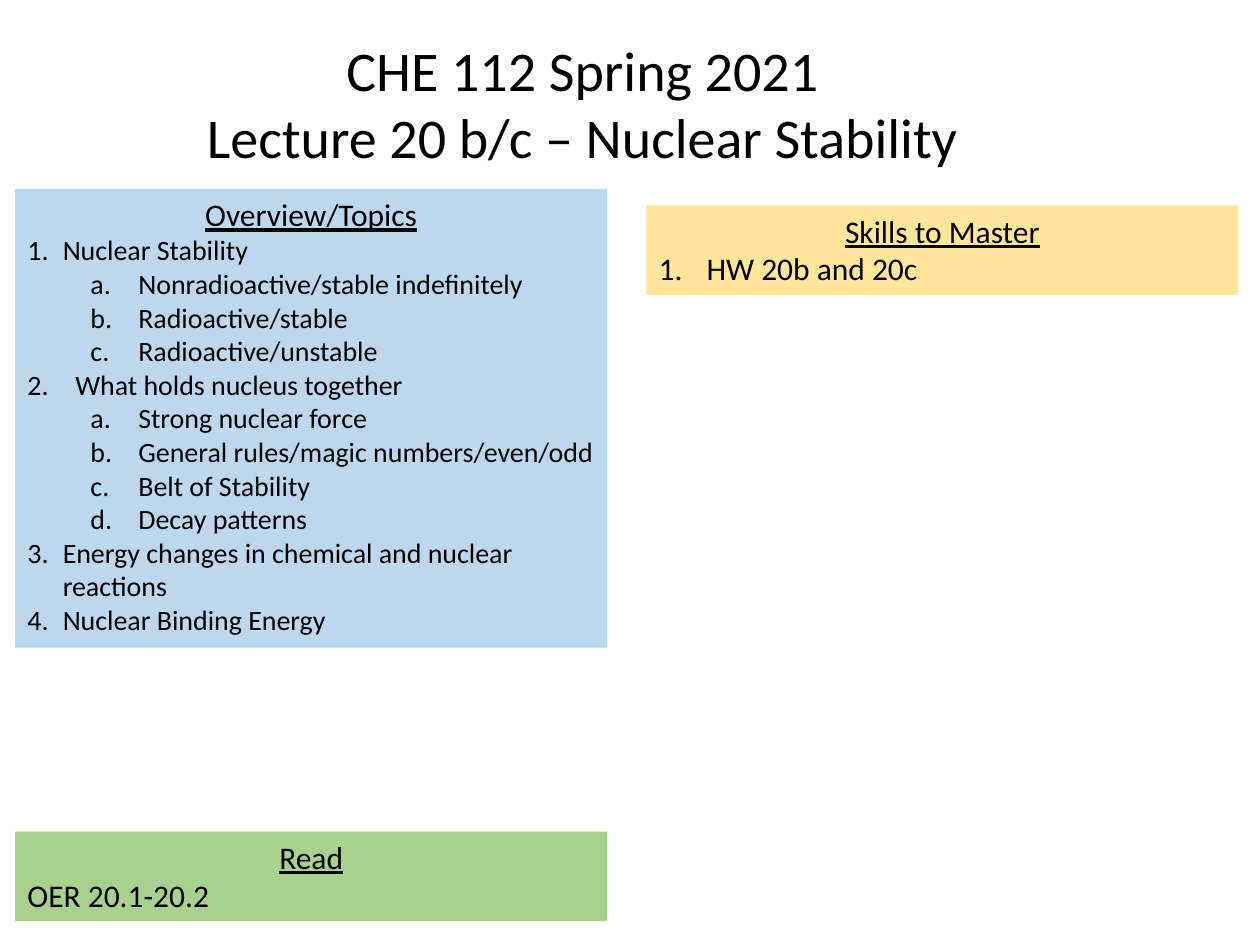
"""Build the lecture overview slide with its topic, skill and reading panels."""
from dataclasses import dataclass
from typing import Optional

from lxml import etree
from pptx import Presentation
from pptx.dml.color import RGBColor
from pptx.enum.text import MSO_ANCHOR, MSO_AUTO_SIZE, PP_ALIGN
from pptx.oxml.ns import qn
from pptx.slide import Slide
from pptx.text.text import TextFrame
from pptx.util import Inches, Pt

CENTER, LEFT = PP_ALIGN.CENTER, PP_ALIGN.LEFT
TOP = MSO_ANCHOR.TOP
FIT_SHAPE = MSO_AUTO_SIZE.SHAPE_TO_FIT_TEXT
FONT = "Calibri"
COLORS = {"text": "000000", "topics": "BDD7EE", "skills": "FFE699", "read": "A9D18E"}
PANEL_WIDTH = 4.7
LEFT_COLUMN, RIGHT_COLUMN = 0.12, 5.13


@dataclass(frozen=True)
class Numbering:
    """Automatic numbering of a paragraph, with lengths in inches."""
    style: str
    margin: float
    hanging: float
    level: int = 0


@dataclass(frozen=True)
class Line:
    """One paragraph of text."""
    text: str
    size: int = 18
    numbering: Optional[Numbering] = None
    centered: bool = False
    underlined: bool = False


@dataclass(frozen=True)
class Panel:
    """A filled box with an underlined heading, with lengths in inches."""
    heading: str
    color: str
    left: float
    top: float
    height: float
    lines: tuple[Line, ...]


TOPIC = Numbering("arabicPeriod", 0.28, 0.28)
WIDE_TOPIC = Numbering("arabicPeriod", 0.38, 0.38)
SUBTOPIC = Numbering("alphaLcPeriod", 0.88, 0.38, 1)

OUTLINE = (
    ("Nuclear Stability", TOPIC),
    ("Nonradioactive/stable indefinitely", SUBTOPIC),
    ("Radioactive/stable", SUBTOPIC),
    ("Radioactive/unstable", SUBTOPIC),
    ("What holds nucleus together", WIDE_TOPIC),
    ("Strong nuclear force", SUBTOPIC),
    ("General rules/magic numbers/even/odd", SUBTOPIC),
    ("Belt of Stability", SUBTOPIC),
    ("Decay patterns", SUBTOPIC),
    ("Energy changes in chemical and nuclear reactions", TOPIC),
    ("Nuclear Binding Energy", TOPIC),
)
PANELS = (
    Panel("Overview/Topics", "topics", LEFT_COLUMN, 1.5, 3.64,
          tuple(Line(text, 16, numbering) for text, numbering in OUTLINE)),
    Panel("Skills to Master", "skills", RIGHT_COLUMN, 1.63, 0.71,
          (Line("HW 20b and 20c", numbering=WIDE_TOPIC),)),
    Panel("Read", "read", LEFT_COLUMN, 6.6, 0.71, (Line("OER 20.1-20.2"),)),
)
TITLE = tuple(Line(text, 32, centered=True) for text in (
    "CHE 112 Spring 2021", "Lecture 20 b/c – Nuclear Stability"))


def write_lines(frame: TextFrame, lines: tuple[Line, ...], wrap: bool) -> None:
    """Fill a text frame with one paragraph per line."""
    frame.word_wrap = wrap
    frame.auto_size = FIT_SHAPE
    frame.vertical_anchor = TOP
    for index, line in enumerate(lines):
        paragraph = frame.add_paragraph() if index else frame.paragraphs[0]
        paragraph.alignment = CENTER if line.centered else LEFT
        if line.numbering:
            paragraph.level = line.numbering.level
            properties = paragraph._p.get_or_add_pPr()
            properties.set("marL", str(Inches(line.numbering.margin)))
            properties.set("indent", str(-Inches(line.numbering.hanging)))
            etree.SubElement(properties, qn("a:buFont"), typeface="+mj-lt")
            etree.SubElement(properties, qn("a:buAutoNum"), type=line.numbering.style)
        run = paragraph.add_run()
        run.text = line.text
        run.font.name = FONT
        run.font.size = Pt(line.size)
        run.font.underline = line.underlined
        run.font.color.rgb = RGBColor.from_string(COLORS["text"])


def add_panel(slide: Slide, panel: Panel) -> None:
    """Draw a panel with its heading and lines."""
    shape = slide.shapes.add_textbox(Inches(panel.left), Inches(panel.top),
                                     Inches(PANEL_WIDTH), Inches(panel.height))
    shape.fill.solid()
    shape.fill.fore_color.rgb = RGBColor.from_string(COLORS[panel.color])
    heading = Line(panel.heading, centered=True, underlined=True)
    write_lines(shape.text_frame, (heading, *panel.lines), wrap=True)


def main() -> None:
    """Create and save the presentation."""
    presentation = Presentation()
    presentation.slide_width, presentation.slide_height = Inches(10), Inches(7.5)
    slide = presentation.slides.add_slide(presentation.slide_layouts[6])
    for panel in PANELS:
        add_panel(slide, panel)
    title = slide.shapes.add_textbox(Inches(1.51), Inches(0.23), Inches(6.23), Inches(1.18))
    write_lines(title.text_frame, TITLE, wrap=False)
    presentation.save("out.pptx")


if __name__ == "__main__":
    main()
